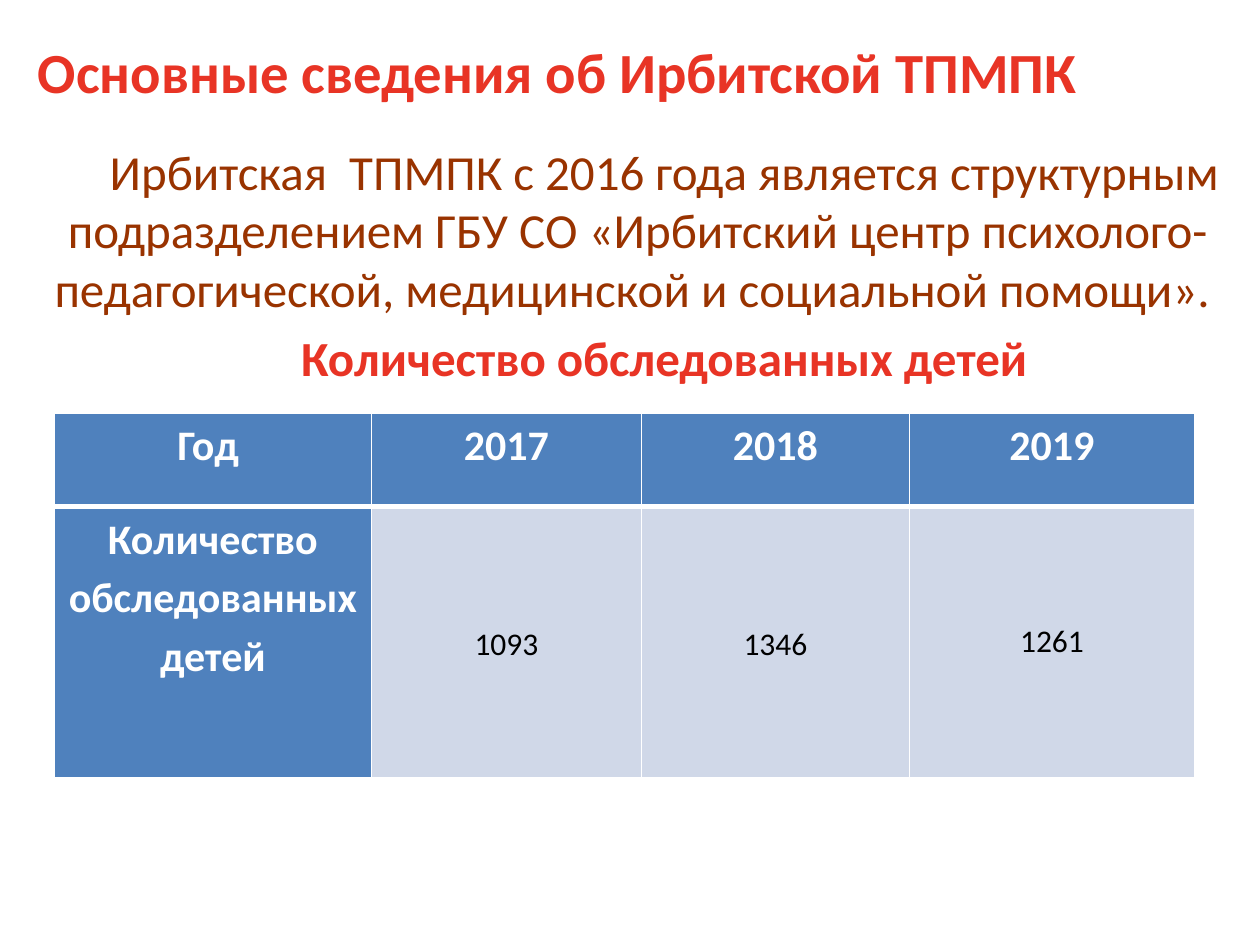
from dataclasses import dataclass

from lxml.etree import SubElement
from pptx import Presentation
from pptx.dml.color import RGBColor
from pptx.enum.text import MSO_ANCHOR, PP_ALIGN
from pptx.oxml.ns import qn
from pptx.util import Inches, Pt


@dataclass(frozen=True)
class Theme:
    """Colours, type sizes and font of the deck."""
    font: str = "Calibri"
    red: str = "E83425"
    brown: str = "993300"
    blue: str = "4F81BD"
    pale: str = "D0D8E8"
    white: str = "FFFFFF"
    black: str = "000000"
    title: float = 32.4
    body: float = 28
    header: float = 24
    value: float = 18


class Builder:
    """Adds styled elements to the current slide."""

    def __init__(self, prs, theme):
        self.theme = theme
        self.s = prs.slides.add_slide(prs.slide_layouts[5])

    def format(self, p, size, color, bold=False, align=PP_ALIGN.CENTER):
        """Format the runs of a paragraph."""
        p.alignment = align
        for r in p.runs:
            r.font.name = self.theme.font
            r.font.size = Pt(size)
            r.font.bold = bold
            r.font.color.rgb = RGBColor.from_string(color)

    def title(self, text, x, y, w, h):
        """Place and fill the title placeholder."""
        sp = self.s.shapes.title
        sp.left, sp.top, sp.width, sp.height = map(Inches, (x, y, w, h))
        tf = sp.text_frame
        tf.text = text
        tf.word_wrap = True
        tf.vertical_anchor = MSO_ANCHOR.MIDDLE
        self.format(tf.paragraphs[0], self.theme.title, self.theme.red, True, PP_ALIGN.LEFT)

    def body(self, items, x, y, w, h):
        """Add centred paragraphs with a first-line indent."""
        tf = self.s.shapes.add_textbox(*map(Inches, (x, y, w, h))).text_frame
        tf.word_wrap = True
        for i, (text, color, bold) in enumerate(items):
            p = tf.add_paragraph() if i else tf.paragraphs[0]
            p.text = text
            pPr = p._p.get_or_add_pPr()
            pPr.set("marL", str(Inches(0.11)))
            pPr.set("indent", str(Inches(0.42)))
            if i:
                p.space_before = Pt(self.theme.body * 0.2)
            self.format(p, self.theme.body, color, bold)

    def borders(self, cell, **widths):
        """Draw white cell borders of the given widths."""
        tcPr = cell._tc.get_or_add_tcPr()
        for side in "LRTB":
            ln = SubElement(tcPr, qn(f"a:ln{side}"), w=str(Pt(widths.get(side, 1))))
            fill = SubElement(ln, qn("a:solidFill"))
            SubElement(fill, qn("a:srgbClr"), val=self.theme.white)

    def cell(self, cell, text, is_header):
        """Fill and format one table cell."""
        t = self.theme
        cell.fill.solid()
        cell.fill.fore_color.rgb = RGBColor.from_string(t.blue if is_header else t.pale)
        cell.margin_left = cell.margin_right = Inches(0.06)
        cell.margin_top = cell.margin_bottom = 0
        cell.vertical_anchor = MSO_ANCHOR.TOP if is_header else MSO_ANCHOR.MIDDLE
        cell.text = text
        p = cell.text_frame.paragraphs[0]
        p.line_spacing = 1.15
        if is_header:
            self.format(p, t.header, t.white, True)
        else:
            self.format(p, t.value, t.black)

    def table(self, rows, x, y, widths, heights):
        """Add a table with a header row and a header column."""
        size = Inches(sum(widths)), Inches(sum(heights))
        table = self.s.shapes.add_table(len(rows), len(widths), Inches(x), Inches(y), *size).table
        for col, w in zip(table.columns, widths):
            col.width = Inches(w)
        for i, (row, h) in enumerate(zip(rows, heights)):
            table.rows[i].height = Inches(h)
            for j, text in enumerate(row):
                cell = table.cell(i, j)
                self.borders(cell, **({"T": 3} if i else {"B": 3}))
                self.cell(cell, text, i == 0 or j == 0)
        table.cell(1, 3).text_frame.paragraphs[0].line_spacing = 1.0


def main():
    prs = Presentation()
    prs.slide_width, prs.slide_height = Inches(10), Inches(7.5)
    theme = Theme()
    b = Builder(prs, theme)
    b.title("Основные сведения об Ирбитской ТПМПК", 0.2, 0.21, 8.66, 0.71)
    b.body([
        ("Ирбитская  ТПМПК с 2016 года является структурным подразделением ГБУ СО "
         "«Ирбитский центр психолого-педагогической, медицинской и социальной помощи». ",
         theme.brown, False),
        ("Количество обследованных детей", theme.red, True),
    ], 0.2, 1.07, 9.61, 6.22)
    b.table([
        ("Год ", "2017", "2018", "2019"),
        ("Количество обследованных детей", "1093", "1346", "1261"),
    ], 0.43, 3.28, (2.52, 2.14, 2.13, 2.26), (0.74, 2.15))
    prs.save("out.pptx")


if __name__ == "__main__":
    main()
